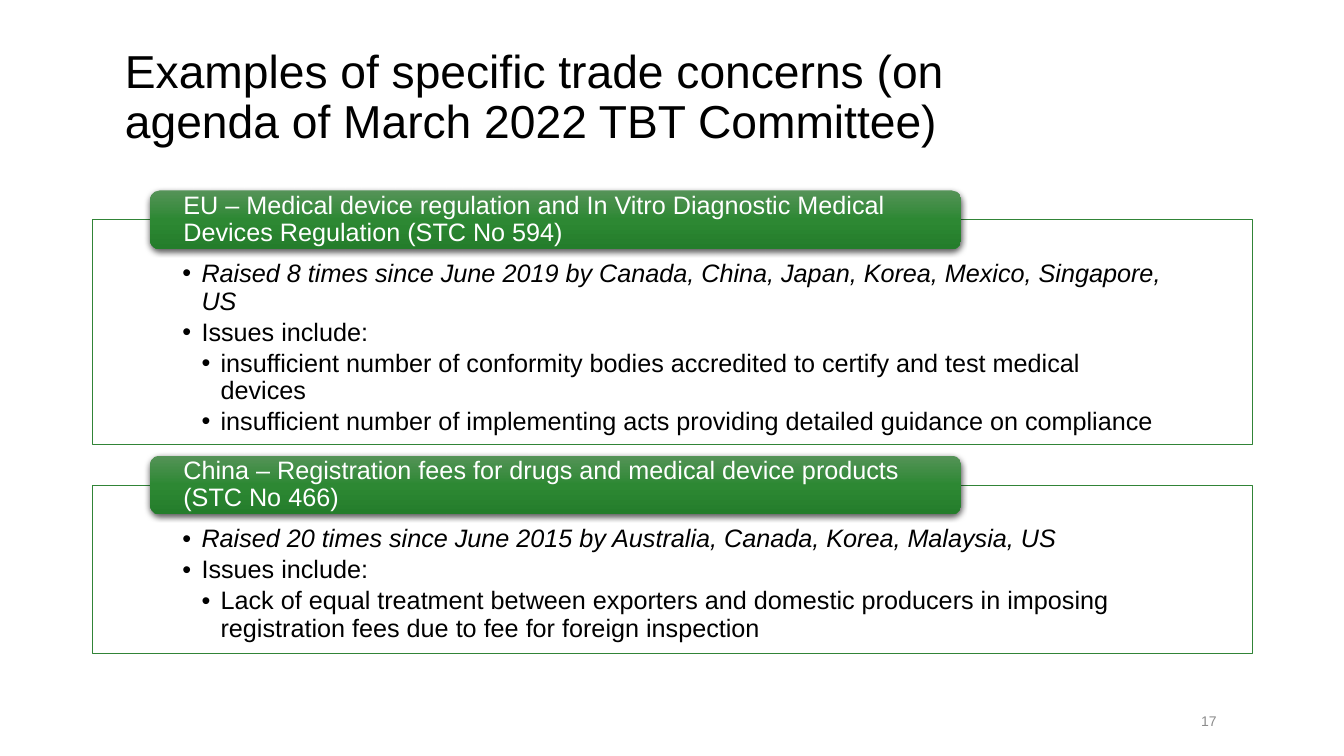
from copy import deepcopy

from lxml import etree
from pptx import Presentation
from pptx.dml.color import RGBColor
from pptx.enum.shapes import MSO_SHAPE
from pptx.enum.text import MSO_ANCHOR, PP_ALIGN
from pptx.oxml.ns import qn
from pptx.util import Cm, Pt

RECTANGLE, ROUNDED = MSO_SHAPE.RECTANGLE, MSO_SHAPE.ROUNDED_RECTANGLE
TOP, MIDDLE = MSO_ANCHOR.TOP, MSO_ANCHOR.MIDDLE
LEFT, RIGHT = PP_ALIGN.LEFT, PP_ALIGN.RIGHT

TITLE = "Examples of specific trade concerns (on agenda of March 2022 TBT Committee)"
PAGE_NUMBER = "17"
CONCERNS = [
    {
        "heading": "EU – Medical device regulation and In Vitro Diagnostic Medical Devices Regulation (STC No 594)",
        "height": 5.66,
        "points": [
            (1, True, "Raised 8 times since June 2019 by Canada, China, Japan, Korea, Mexico, Singapore, US"),
            (1, False, "Issues include:"),
            (2, False, "insufficient number of conformity bodies accredited to certify and test medical devices"),
            (2, False, "insufficient number of implementing acts providing detailed guidance on compliance"),
        ],
    },
    {
        "heading": "China – Registration fees for drugs and medical device products (STC No 466)",
        "height": 4.24,
        "points": [
            (1, True, "Raised 20 times since June 2015 by Australia, Canada, Korea, Malaysia, US"),
            (1, False, "Issues include:"),
            (2, False, "Lack of equal treatment between exporters and domestic producers in imposing "
                       "registration fees due to fee for foreign inspection"),
        ],
    },
]

COLORS = {"black": "000000", "white": "FFFFFF", "grey": "8C8C8C", "border": "318437"}
HEADING_GRADIENT = [(0, "559358"), (0.5, "2D8833"), (1, "247D2B")]

PANEL_LEFT, PANEL_WIDTH, FIRST_PANEL_TOP, PANEL_GAP = 2.34, 29.21, 5.54, 1.02
HEADING_OFFSET, HEADING_WIDTH, HEADING_HEIGHT = 1.44, 20.45, 1.48
INDENT = 0.48

FRAMES = {
    "title": {"vertical_anchor": MIDDLE},
    "number": {"vertical_anchor": MIDDLE},
    "heading": {"vertical_anchor": MIDDLE, "margin_left": Cm(0.77), "margin_right": Cm(0.77),
                "margin_top": 0, "margin_bottom": 0},
    "panel": {"vertical_anchor": TOP, "margin_left": Cm(2.26), "margin_right": Cm(2.26),
              "margin_top": Cm(1.04), "margin_bottom": Cm(0.36)},
}
PARAGRAPHS = {
    "title": {"alignment": LEFT, "line_spacing": 0.9},
    "number": {"alignment": RIGHT},
    "heading": {"alignment": LEFT, "line_spacing": 0.9},
    "panel": {"alignment": LEFT, "line_spacing": 0.9, "space_after": Pt(2.7)},
}
FONTS = {"title": (33, "black"), "number": (10, "grey"), "heading": (18, "white"), "panel": (18, "black")}


def rgb(name):
    return RGBColor.from_string(COLORS[name])


def apply(target, values):
    for name, value in values.items():
        setattr(target, name, value)


def add_bullet(paragraph, level):
    properties = paragraph._p.get_or_add_pPr()
    properties.set("marL", str(Cm(INDENT * level)))
    properties.set("indent", str(-Cm(INDENT)))
    etree.SubElement(properties, qn("a:buFont")).set("typeface", "Arial")
    etree.SubElement(properties, qn("a:buChar")).set("char", "•")


def write(shape, role, points):
    frame = shape.text_frame
    apply(frame, {"word_wrap": True, **FRAMES[role]})
    size, color = FONTS[role]
    for index, (level, italic, text) in enumerate(points):
        paragraph = frame.add_paragraph() if index else frame.paragraphs[0]
        if level:
            add_bullet(paragraph, level)
        apply(paragraph, PARAGRAPHS[role])
        run = paragraph.add_run()
        run.text = text
        apply(run.font, {"name": "Arial", "size": Pt(size), "italic": italic})
        run.font.color.rgb = rgb(color)


def add_box(slide, kind, *bounds):
    box = slide.shapes.add_shape(kind, *map(Cm, bounds))
    box.shadow.inherit = False
    return box


def add_panel(slide, top, concern):
    panel = add_box(slide, RECTANGLE, PANEL_LEFT, top, PANEL_WIDTH, concern["height"])
    panel.fill.solid()
    panel.fill.fore_color.rgb = rgb("white")
    fill_color = panel._element.spPr.find(qn("a:solidFill"))[0]
    etree.SubElement(fill_color, qn("a:alpha")).set("val", "90000")
    panel.line.color.rgb = rgb("border")
    panel.line.width = Pt(0.5)
    write(panel, "panel", concern["points"])


def add_heading(slide, panel_top, text):
    heading = add_box(slide, ROUNDED, PANEL_LEFT + HEADING_OFFSET, panel_top - HEADING_HEIGHT / 2,
                      HEADING_WIDTH, HEADING_HEIGHT)
    heading.fill.gradient()
    heading.fill.gradient_angle = 270
    properties = heading._element.spPr
    stop_list = properties.find(".//" + qn("a:gsLst"))
    stop_list.append(deepcopy(stop_list[0]))
    for stop, (position, color) in zip(heading.fill.gradient_stops, HEADING_GRADIENT):
        stop.position = position
        stop.color.rgb = RGBColor.from_string(color)
    heading.line.fill.background()
    shadow = etree.SubElement(properties.find(qn("a:effectLst")), qn("a:outerShdw"),
                              blurRad=str(Pt(4.5)), dist=str(Pt(1.5)), dir="5400000", rotWithShape="0")
    shadow_color = etree.SubElement(shadow, qn("a:srgbClr"), val=COLORS["black"])
    etree.SubElement(shadow_color, qn("a:alpha"), val="63000")
    write(heading, "heading", [(0, False, text)])


def main():
    deck = Presentation()
    deck.slide_width, deck.slide_height = Cm(33.87), Cm(19.05)
    slide = deck.slides.add_slide(deck.slide_layouts[6])

    title = slide.shapes.add_textbox(Cm(2.9), Cm(1.02), Cm(22.83), Cm(2.92))
    write(title, "title", [(0, False, TITLE)])
    page_number = slide.shapes.add_textbox(Cm(28.04), Cm(17.65), Cm(2.87), Cm(1.02))
    write(page_number, "number", [(0, False, PAGE_NUMBER)])

    panel_top = FIRST_PANEL_TOP
    for concern in CONCERNS:
        add_panel(slide, panel_top, concern)
        add_heading(slide, panel_top, concern["heading"])
        panel_top += concern["height"] + PANEL_GAP

    deck.save("out.pptx")


if __name__ == "__main__":
    main()
